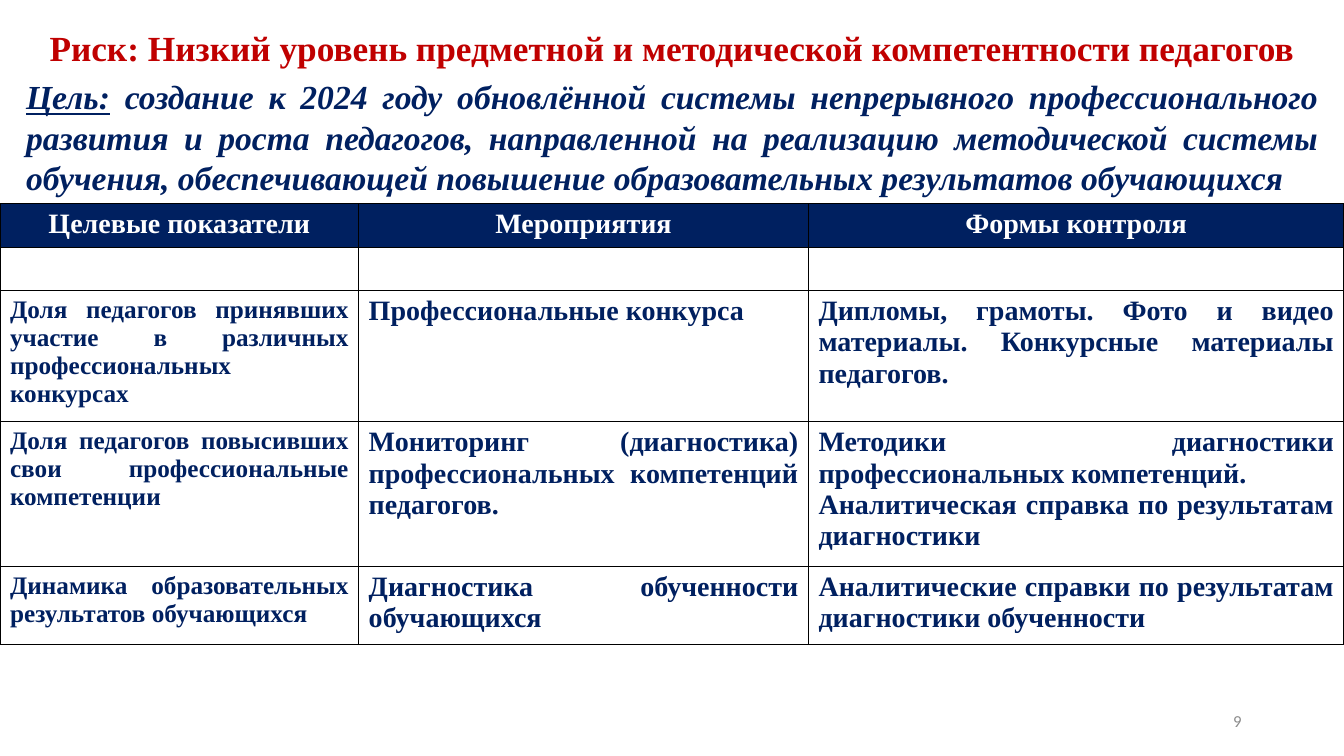
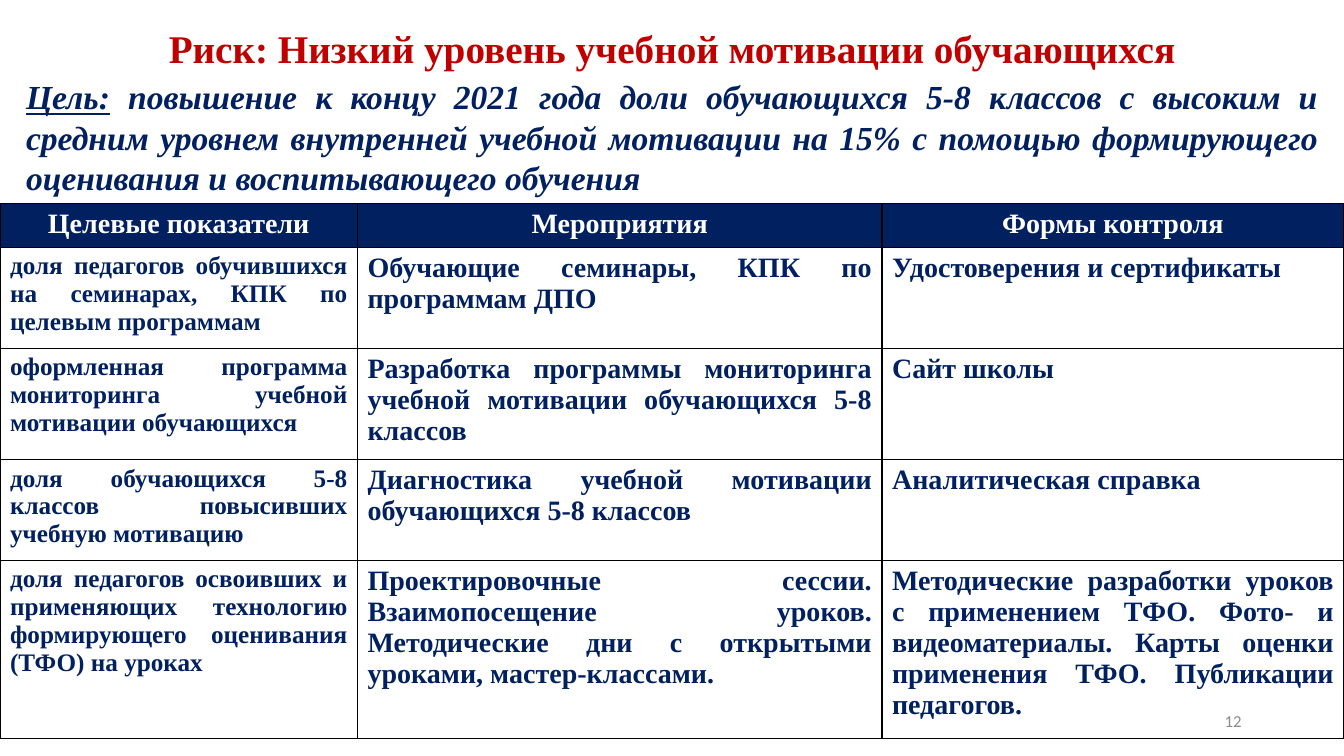
"""Build two risk pages, each with a goal and a table of indicators, activities and controls."""
from dataclasses import dataclass

from lxml import etree
from pptx import Presentation, util as u
from pptx.dml.color import RGBColor
from pptx.enum import text as t
from pptx.oxml import ns

Pt = u.Pt


@dataclass(frozen=True)
class Theme:
    serif: str = "Times New Roman"
    sans: str = "Calibri"
    red: str = "C00000"
    navy: str = "002060"
    white: str = "FFFFFF"
    gray: str = "8C8C8C"
    border: str = "000000"
    goal_size: float = 24
    header_size: float = 20
    column_sizes: tuple[float, ...] = (18, 20, 20)
    number_size: float = 12


THEME = Theme()
HEADERS = ("Целевые показатели", "Мероприятия", "Формы контроля")
PAGE_WIDTH, PAGE_HEIGHT = 960, 540
TABLE_TOP = 145.5
ALIGN = t.PP_ALIGN


@dataclass(frozen=True)
class Box:
    left: float
    top: float
    width: float
    height: float


@dataclass(frozen=True)
class Style:
    size: float
    color: str
    font: str = THEME.serif
    bold: bool = True
    italic: bool = False
    underline: bool = False


@dataclass(frozen=True)
class RiskPage:
    number: int
    title: str
    title_size: float
    goal: str
    column_widths: tuple[float, ...]
    row_heights: tuple[float, ...]
    rows: tuple[tuple[str, ...], ...]


PAGES = (
    RiskPage(
        9,
        "Риск: Низкий уровень предметной и методической компетентности педагогов",
        25.2,
        " создание к 2024 году обновлённой системы непрерывного профессионального развития "
        "и роста педагогов, направленной на реализацию методической системы обучения, "
        "обеспечивающей повышение образовательных результатов обучающихся",
        (256.2, 321.3, 382.5),
        (31, 31, 93.5, 103.5, 55.5),
        (
            ("", "", ""),
            ("Доля педагогов принявших участие в различных профессиональных конкурсах",
             "Профессиональные конкурса",
             "Дипломы, грамоты. Фото и видео материалы. Конкурсные материалы педагогов."),
            ("Доля педагогов повысивших свои профессиональные компетенции",
             "Мониторинг (диагностика) профессиональных компетенций педагогов.",
             "Методики диагностики профессиональных компетенций.\n"
             "Аналитическая справка по результатам диагностики"),
            ("Динамика образовательных результатов обучающихся",
             "Диагностика обученности обучающихся",
             "Аналитические справки по результатам диагностики обученности"),
        ),
    ),
    RiskPage(
        12,
        "Риск: Низкий уровень учебной мотивации обучающихся",
        28,
        " повышение к концу 2021 года доли обучающихся 5-8 классов с высоким и средним "
        "уровнем внутренней учебной мотивации на 15% с помощью формирующего оценивания "
        "и воспитывающего обучения",
        (255.4, 374.6, 330),
        (31, 72, 79.5, 72, 127),
        (
            ("доля педагогов обучившихся на семинарах, КПК по целевым программам",
             "Обучающие семинары, КПК по программам ДПО",
             "Удостоверения и сертификаты"),
            ("оформленная программа мониторинга учебной мотивации обучающихся",
             "Разработка программы мониторинга учебной мотивации обучающихся 5-8 классов",
             "Сайт школы"),
            ("доля обучающихся 5-8 классов повысивших учебную мотивацию",
             "Диагностика учебной мотивации обучающихся 5-8 классов",
             "Аналитическая справка"),
            ("доля педагогов освоивших и применяющих технологию формирующего оценивания "
             "(ТФО) на уроках",
             "Проектировочные сессии. Взаимопосещение уроков. Методические дни с открытыми "
             "уроками, мастер-классами.",
             "Методические разработки уроков с применением ТФО. Фото- и видеоматериалы. "
             "Карты оценки применения ТФО. Публикации педагогов."),
        ),
    ),
)


def add_span(para, words: str, style: Style) -> None:
    span = para.add_run()
    span.text = words
    span.font.name = style.font
    span.font.size = Pt(style.size)
    span.font.bold = style.bold
    span.font.italic = style.italic
    span.font.underline = style.underline
    span.font.color.rgb = RGBColor.from_string(style.color)


def add_text(page, box: Box, spans: list[tuple[str, Style]], align, anchor,
             spacing: float = 1.0) -> None:
    frame = page.shapes.add_textbox(
        Pt(box.left), Pt(box.top), Pt(box.width), Pt(box.height)).text_frame
    frame.word_wrap = True
    frame.vertical_anchor = anchor
    para = frame.paragraphs[0]
    para.alignment = align
    para.line_spacing = spacing
    for words, style in spans:
        add_span(para, words, style)


def add_borders(cell) -> None:
    properties = cell._tc.get_or_add_tcPr()
    for index, side in enumerate(("lnL", "lnR", "lnT", "lnB")):
        line = etree.Element(ns.qn(f"a:{side}"), w=str(Pt(1)))
        fill = etree.SubElement(line, ns.qn("a:solidFill"))
        etree.SubElement(fill, ns.qn("a:srgbClr"), val=THEME.border)
        properties.insert(index, line)


def fill_cell(cell, words: str, style: Style, fill: str, align) -> None:
    cell.fill.solid()
    cell.fill.fore_color.rgb = RGBColor.from_string(fill)
    add_borders(cell)
    for index, line in enumerate(words.split("\n")):
        para = cell.text_frame.add_paragraph() if index else cell.text_frame.paragraphs[0]
        para.alignment = align
        if line:
            add_span(para, line, style)


def add_risk_table(page, risk: RiskPage) -> None:
    table = page.shapes.add_table(
        len(risk.row_heights), len(HEADERS), 0, Pt(TABLE_TOP),
        Pt(PAGE_WIDTH), Pt(sum(risk.row_heights))).table
    table.horz_banding = False
    for column, width in zip(table.columns, risk.column_widths):
        column.width = Pt(width)
    for row, height in zip(table.rows, risk.row_heights):
        row.height = Pt(height)
    header = Style(THEME.header_size, THEME.white)
    for index, words in enumerate(HEADERS):
        fill_cell(table.cell(0, index), words, header, THEME.navy, ALIGN.CENTER)
    for row_index, row in enumerate(risk.rows, 1):
        for index, (words, size) in enumerate(zip(row, THEME.column_sizes)):
            fill_cell(table.cell(row_index, index), words, Style(size, THEME.navy),
                      THEME.white, ALIGN.JUSTIFY)


def add_risk_page(deck, risk: RiskPage) -> None:
    page = deck.slides.add_slide(deck.slide_layouts[6])
    anchors = t.MSO_ANCHOR
    title = Style(risk.title_size, THEME.red)
    label = Style(THEME.goal_size, THEME.navy, italic=True, underline=True)
    goal = Style(THEME.goal_size, THEME.navy, italic=True)
    number = Style(THEME.number_size, THEME.gray, THEME.sans, bold=False)
    add_text(page, Box(0, 6.5, PAGE_WIDTH, 59), [(risk.title, title)],
             ALIGN.CENTER, anchors.MIDDLE, 0.9)
    add_text(page, Box(11.5, 51, 937, 94.5), [("Цель:", label), (risk.goal, goal)],
             ALIGN.JUSTIFY, anchors.TOP)
    add_risk_table(page, risk)
    add_text(page, Box(678, 500.5, 216, 28.75), [(str(risk.number), number)],
             ALIGN.RIGHT, anchors.MIDDLE)


def main() -> None:
    deck = Presentation()
    deck.slide_width, deck.slide_height = Pt(PAGE_WIDTH), Pt(PAGE_HEIGHT)
    for risk in PAGES:
        add_risk_page(deck, risk)
    deck.save("out.pptx")


if __name__ == "__main__":
    main()
